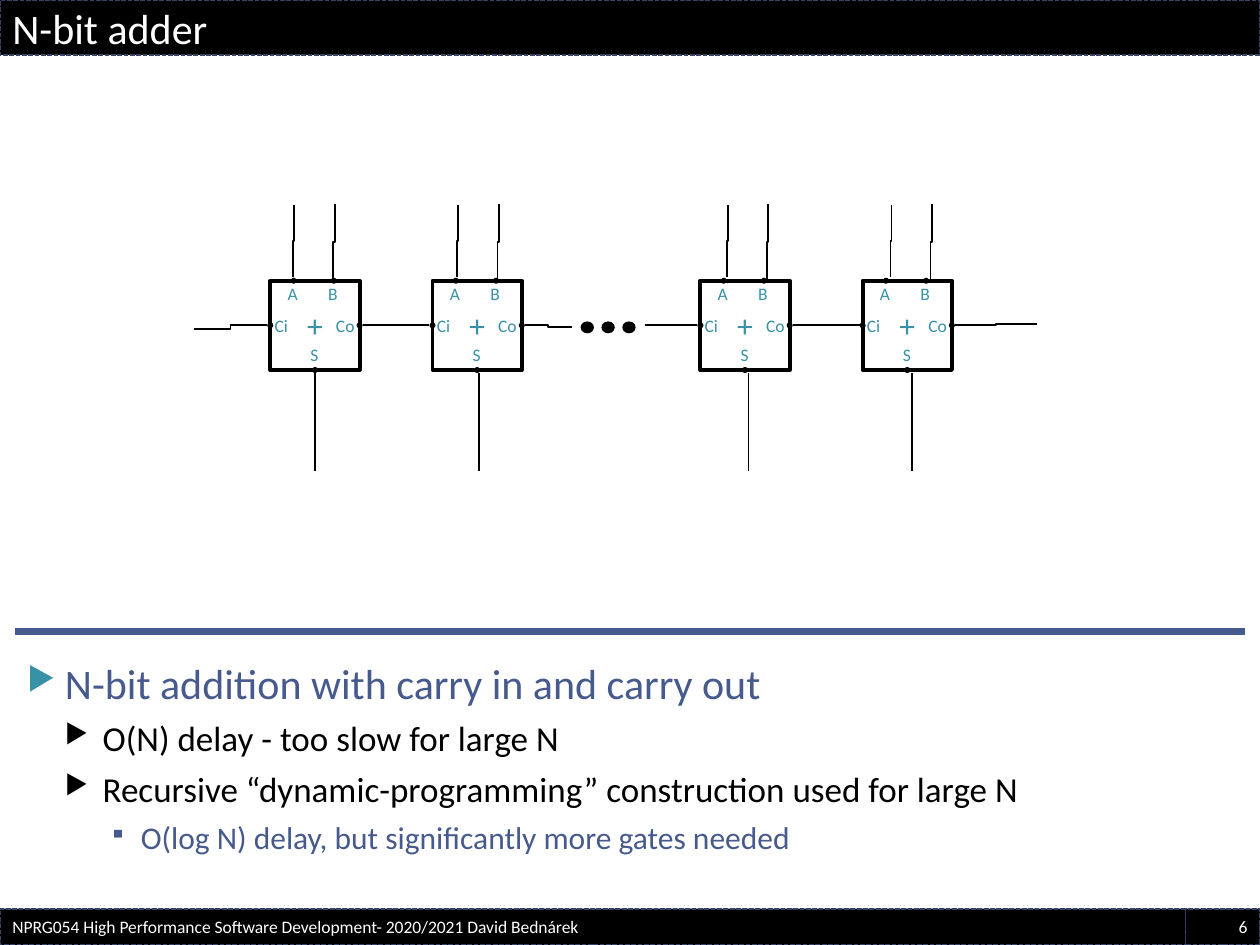
from dataclasses import dataclass

from lxml.etree import SubElement
from pptx import Presentation
from pptx.dml.color import RGBColor
from pptx.enum.dml import MSO_LINE
from pptx.enum.shapes import MSO_CONNECTOR, MSO_SHAPE
from pptx.enum.text import MSO_ANCHOR, MSO_AUTO_SIZE, PP_ALIGN
from pptx.oxml.ns import qn
from pptx.util import Cm, Pt


@dataclass(frozen=True)
class Theme:
    font: str = "Calibri"
    black: RGBColor = RGBColor(0, 0, 0)
    white: RGBColor = RGBColor(255, 255, 255)
    blue: RGBColor = RGBColor(0x47, 0x5A, 0x8D)
    teal: RGBColor = RGBColor(0x38, 0x91, 0xA7)
    edge: RGBColor = RGBColor(0x35, 0x43, 0x68)
    title: int = 24
    body: tuple = (24, 20, 18)
    plus: int = 18
    small: int = 10


THEME = Theme()

ADDERS = [(5.45, 0), (8.72, 0.04), (14.12, 0.07), (17.39, 0.1)]
ADDER_TOP = 5.66
SIDE = 1.8
PIN = 0.12
PINS = [(0.47, 0), (1.28, 0), (SIDE, 0.9), (0, 0.9), (0.9, SIDE)]
PIN_LABELS = [("A", 0.45, 0.25, 0.33), ("B", 1.26, 0.25, 0.33),
              ("Ci", 0.22, 0.9, 0.33), ("Co", 1.51, 0.9, 0.38),
              ("S", 0.89, 1.49, 0.38)]
PORT_WIRES = [(0.46, -0.08, -1.52, 0.02), (1.27, 0, -1.55, 0.03),
              (0.9, 3.84, 1.86, 0)]

BULLETS = [
    (0, "N-bit addition with carry in and carry out"),
    (1, "O(N) delay - too slow for large N"),
    (1, "Recursive “dynamic-programming” construction used for large N"),
    (2, "O(log N) delay, but significantly more gates needed"),
]
LEVELS = [
    {"color": THEME.blue, "mark": "▶", "mark_color": THEME.teal,
     "indent": 0.76, "hang": 0.76, "before": 6},
    {"color": THEME.black, "mark": "▶", "mark_color": THEME.black,
     "indent": 1.52, "hang": 0.76, "before": 5},
    {"color": THEME.blue, "mark": "▪", "mark_color": THEME.blue,
     "indent": 2.29, "hang": 0.64, "before": 5},
]


def apply(target, values):
    for name, value in values.items():
        setattr(target, name, value)


def write(paragraph, text, size, color, align=PP_ALIGN.LEFT):
    paragraph.alignment = align
    run = paragraph.add_run()
    run.text = text
    apply(run.font, {"name": THEME.font, "size": Pt(size)})
    run.font.color.rgb = color


def add_box(shapes, kind, left, top, width, height, fill=None, line=None, weight=1):
    box = shapes.add_shape(kind, Cm(left), Cm(top), Cm(width), Cm(height))
    box.shadow.inherit = False
    if fill is None:
        box.fill.background()
    else:
        box.fill.solid()
        box.fill.fore_color.rgb = fill
    if line is None:
        box.line.fill.background()
    else:
        box.line.color.rgb = line
        box.line.width = Pt(weight)
    return box


def add_dot(shapes, x, y, width, height):
    add_box(shapes, MSO_SHAPE.OVAL, x - width / 2, y - height / 2,
            width, height, fill=THEME.black)


def add_wire(shapes, kind, start, end, color=THEME.black, weight=1):
    wire = shapes.add_connector(kind, *(Cm(v) for v in (*start, *end)))
    wire.line.color.rgb = color
    wire.line.width = Pt(weight)
    SubElement(wire.element.spPr, qn("a:effectLst"))
    return wire


def add_rising_wire(shapes, x, bottom, top, step):
    middle_x, middle_y = x + step / 2, (bottom + top) / 2
    half = (bottom - top) / 2
    wire = add_wire(shapes, MSO_CONNECTOR.ELBOW,
                    (middle_x + half, middle_y + step / 2),
                    (middle_x - half, middle_y - step / 2))
    wire.element.spPr.find(qn("a:xfrm")).set("rot", "5400000")


def add_bar(slide, left, top, width, height, text, size, align=PP_ALIGN.LEFT):
    bar = add_box(slide.shapes, MSO_SHAPE.RECTANGLE, left, top, width, height,
                  fill=THEME.black, line=THEME.edge, weight=0.9)
    bar.line.dash_style = MSO_LINE.SQUARE_DOT
    apply(bar.text_frame, {"vertical_anchor": MSO_ANCHOR.MIDDLE, "word_wrap": True})
    write(bar.text_frame.paragraphs[0], text, size, THEME.white, align)


def add_adder(slide, left, top):
    parts = slide.shapes.add_group_shape().shapes
    body = add_box(parts, MSO_SHAPE.RECTANGLE, left, top, SIDE, SIDE,
                   line=THEME.black, weight=2.25)
    body.text_frame.vertical_anchor = MSO_ANCHOR.MIDDLE
    write(body.text_frame.paragraphs[0], "+", THEME.plus, THEME.teal, PP_ALIGN.CENTER)
    for x, y in PINS:
        add_dot(parts, left + x, top + y, PIN, PIN)
    height = 0.43
    for text, x, y, width in PIN_LABELS:
        label = parts.add_textbox(Cm(left + x - width / 2), Cm(top + y - height / 2),
                                  Cm(width), Cm(height))
        apply(label.text_frame, {
            "margin_left": 0, "margin_right": 0, "margin_top": 0, "margin_bottom": 0,
            "vertical_anchor": MSO_ANCHOR.MIDDLE, "word_wrap": False,
            "auto_size": MSO_AUTO_SIZE.SHAPE_TO_FIT_TEXT})
        write(label.text_frame.paragraphs[0], text, THEME.small, THEME.teal,
              PP_ALIGN.CENTER)


def add_ripple_chain(slide, top):
    for left, drift in ADDERS:
        add_adder(slide, left, top)
        for x, bottom, upper, step in PORT_WIRES:
            add_rising_wire(slide.shapes, left + x + drift, top + bottom,
                            top + upper, step)
    carry = top + SIDE / 2
    ins = [left - PIN / 2 for left, _ in ADDERS]
    outs = [left + SIDE + PIN / 2 for left, _ in ADDERS]
    carry_wires = [
        (ins[0], 0, 3.91, 0.07), (ins[1], 0, outs[0], -0.01),
        (11.53, 0.04, outs[1], 0), (ins[2], 0, 13, -0.01),
        (ins[3], -0.01, outs[2], 0), (20.9, -0.03, outs[3], 0),
    ]
    for start, start_dy, end, end_dy in carry_wires:
        add_wire(slide.shapes, MSO_CONNECTOR.ELBOW,
                 (start, carry + start_dy), (end, carry + end_dy))
    ellipsis = slide.shapes.add_group_shape().shapes
    for i in range(3):
        add_dot(ellipsis, 11.84 + 0.42 * i, carry + 0.04, 0.27, 0.24)


def add_bullets(slide, left, top, width, height):
    frame = slide.shapes.add_textbox(Cm(left), Cm(top), Cm(width), Cm(height)).text_frame
    frame.word_wrap = True
    for i, (level, text) in enumerate(BULLETS):
        style = LEVELS[level]
        paragraph = frame.add_paragraph() if i else frame.paragraphs[0]
        apply(paragraph, {"level": level, "space_before": Pt(style["before"])})
        write(paragraph, text, THEME.body[level], style["color"])
        properties = paragraph._p.get_or_add_pPr()
        properties.set("marL", str(Cm(style["indent"])))
        properties.set("indent", str(-Cm(style["hang"])))
        mark_color = SubElement(properties, qn("a:buClr"))
        SubElement(mark_color, qn("a:srgbClr"), val=str(style["mark_color"]))
        SubElement(properties, qn("a:buSzPct"), val="76000")
        SubElement(properties, qn("a:buChar"), char=style["mark"])


def main():
    presentation = Presentation()
    apply(presentation, {"slide_width": Cm(25.4), "slide_height": Cm(19.05)})
    slide = presentation.slides.add_slide(presentation.slide_layouts[6])
    add_wire(slide.shapes, MSO_CONNECTOR.STRAIGHT, (0.3, 12.73), (25.1, 12.73),
             THEME.blue, 4)
    add_bullets(slide, 0.3, 13.13, 24.8, 4.8)
    add_bar(slide, 0, 0, 25.4, 1.11, "N-bit adder", THEME.title)
    add_bar(slide, 23.9, 18.32, 1.5, 0.73, "6", THEME.small, PP_ALIGN.RIGHT)
    add_bar(slide, 0, 18.32, 23.9, 0.73,
            "NPRG054 High Performance Software Development- 2020/2021 David Bednárek",
            THEME.small)
    add_ripple_chain(slide, ADDER_TOP)
    presentation.save("out.pptx")


if __name__ == "__main__":
    main()
